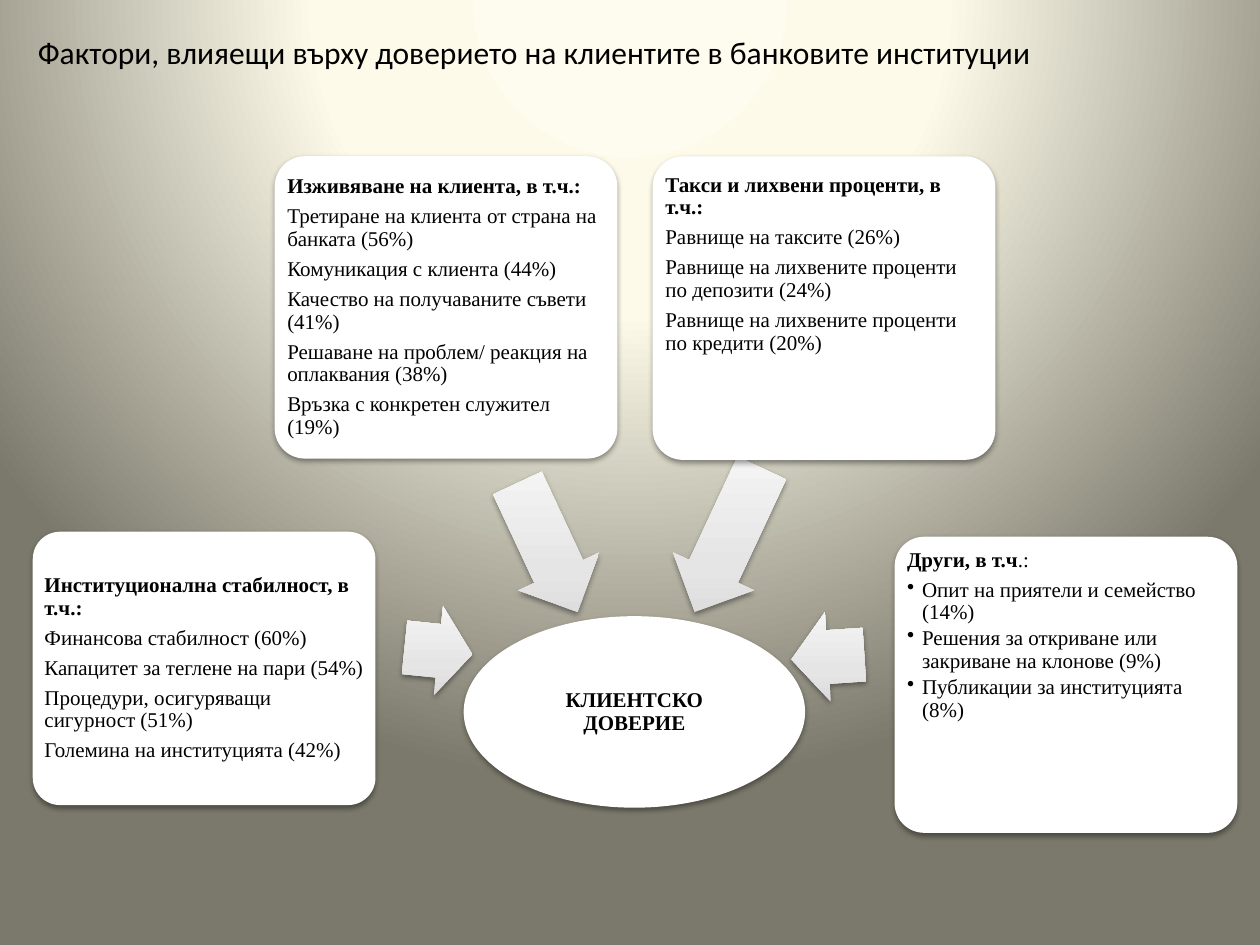
from lxml import etree
from pptx import Presentation
from pptx.dml.color import RGBColor
from pptx.enum.shapes import MSO_SHAPE as SHAPE
from pptx.enum.text import MSO_ANCHOR as ANCHOR, MSO_AUTO_SIZE as AUTO, PP_ALIGN as ALIGN
from pptx.oxml import parse_xml
from pptx.oxml.ns import nsdecls, qn
from pptx.util import Inches, Pt

BLACK = RGBColor(0, 0, 0)
WHITE = RGBColor(255, 255, 255)
BACKDROP = [(0, RGBColor(0xFE, 0xFC, 0xEE)), (40, RGBColor(0xFD, 0xFA, 0xEA)),
            (100, RGBColor(0x7B, 0x79, 0x6B))]
SILVER = [(0, RGBColor(0xDA, 0xDA, 0xDA)), (35, RGBColor(0xE5, 0xE5, 0xE5)),
          (100, RGBColor(0xF5, 0xF5, 0xF5))]
SERIF = "Times New Roman"

# Content
TITLE = "Фактори, влияещи върху доверието на клиентите в банковите институции"
CENTRE = "КЛИЕНТСКО ДОВЕРИЕ"
CARD_W = 2.72
# left, top, height, anchor, top inset, bulleted, heading (bold, regular), items
CARDS = [
    (0.26, 4.22, 2.17, ANCHOR.MIDDLE, 0.03, False,
     ("Институционална стабилност, в т.ч.:", ""),
     ["Финансова стабилност (60%)",
      "Капацитет за теглене на пари (54%)",
      "Процедури, осигуряващи сигурност (51%)",
      "Големина на институцията (42%)"]),
    (2.18, 1.24, 2.4, ANCHOR.MIDDLE, 0.03, False,
     ("Изживяване на клиента, в т.ч.:", ""),
     ["Третиране на клиента от страна на банката (56%)",
      "Комуникация с клиента (44%)",
      "Качество на получаваните съвети (41%)",
      "Решаване на проблем/ реакция на оплаквания (38%)",
      "Връзка с конкретен служител (19%)"]),
    (5.18, 1.24, 2.41, ANCHOR.TOP, 0.07, False,
     ("Такси и лихвени проценти, в т.ч.:", ""),
     ["Равнище на таксите (26%)",
      "Равнище на лихвените проценти по депозити (24%)",
      "Равнище на лихвените проценти по кредити (20%)"]),
    (7.1, 4.26, 2.35, ANCHOR.TOP, 0.03, True,
     ("Други, в т.ч", ".:"),
     ["Опит на приятели и семейство (14%)",
      "Решения за откриване или закриване на клонове (9%)",
      "Публикации за институцията (8%)"]),
]
ARROW_H = 0.71
# left, top, width, rotation
ARROWS = [(3.21, 4.81, 0.54, 185.9), (3.78, 3.99, 1.13, 245),
          (5.15, 3.93, 1.26, 295), (6.28, 4.86, 0.58, 356.2)]


def gradient(stops, direction):
    gs = "".join(f'<a:gs pos="{pos * 1000}"><a:srgbClr val="{color}"/></a:gs>'
                 for pos, color in stops)
    return (f'<a:gradFill {nsdecls("a")} rotWithShape="0">'
            f'<a:gsLst>{gs}</a:gsLst>{direction}</a:gradFill>')


def add_shape(slide, kind, left, top, width, height):
    """White, borderless shape with a soft shadow below it."""
    s = slide.shapes.add_shape(kind, *map(Inches, (left, top, width, height)))
    s.fill.solid()
    s.fill.fore_color.rgb = WHITE
    s.line.fill.background()
    s._element.spPr.append(parse_xml(
        f'<a:effectLst {nsdecls("a")}><a:outerShdw blurRad="40000" dist="20000" '
        'dir="5400000" rotWithShape="0"><a:srgbClr val="000000">'
        '<a:alpha val="38000"/></a:srgbClr></a:outerShdw></a:effectLst>'))
    return s


def set_frame(tf, anchor, inset, top_inset):
    tf.word_wrap = True
    tf.vertical_anchor = anchor
    tf.margin_left = tf.margin_right = tf.margin_bottom = Inches(inset)
    tf.margin_top = Inches(top_inset)


def add_text(p, runs, align=ALIGN.LEFT, after=4.2, bullet=False):
    if bullet:
        pPr = p._p.get_or_add_pPr()
        pPr.set("marL", str(Inches(0.12)))
        pPr.set("indent", str(-Inches(0.12)))
        etree.SubElement(pPr, qn("a:buChar")).set("char", "•")
    p.alignment = align
    p.line_spacing = 0.9
    p.space_after = Pt(after)
    for text, bold in runs:
        if text:
            r = p.add_run()
            r.text = text
            r.font.name, r.font.size, r.font.bold = SERIF, Pt(12), bold
            r.font.color.rgb = BLACK


def add_card(slide, left, top, height, anchor, top_inset, bulleted, heading, items):
    s = add_shape(slide, SHAPE.ROUNDED_RECTANGLE, left, top, CARD_W, height)
    s.adjustments[0] = 0.1
    tf = s.text_frame
    set_frame(tf, anchor, 0.03, top_inset)
    add_text(tf.paragraphs[0], zip(heading, (True, False)))
    for item in items:
        add_text(tf.add_paragraph(), [(item, False)],
                 after=1.8 if bulleted else 4.2, bullet=bulleted)


def add_arrow(slide, left, top, width, rotation):
    s = add_shape(slide, SHAPE.LEFT_ARROW, left, top, width, ARROW_H)
    s.adjustments[0], s.adjustments[1] = 0.6, 0.5
    s.rotation = rotation
    spPr = s._element.spPr
    spPr.replace(spPr.find(qn("a:solidFill")),
                 parse_xml(gradient(SILVER, '<a:lin ang="16200000" scaled="0"/>')))


def main():
    prs = Presentation()
    prs.slide_width, prs.slide_height = Inches(10), Inches(7.5)
    slide = prs.slides.add_slide(prs.slide_layouts[5])

    # Background: circular glow centred above the slide
    glow = gradient(BACKDROP, '<a:path path="circle"><a:fillToRect l="50000" '
                              't="-80000" r="50000" b="180000"/></a:path>')
    slide._element.cSld.insert(0, parse_xml(
        f'<p:bg {nsdecls("p", "a")}><p:bgPr>{glow}<a:effectLst/></p:bgPr></p:bg>'))

    # Title
    title = slide.shapes.title
    title.left, title.top, title.width, title.height = map(
        Inches, (0.2, 0.21, 9.45, 0.4))
    tf = title.text_frame
    set_frame(tf, ANCHOR.TOP, 0.1, 0.05)
    tf.auto_size = AUTO.NONE
    p = tf.paragraphs[0]
    p.alignment = ALIGN.LEFT
    r = p.add_run()
    r.text = TITLE
    r.font.name, r.font.size = "Calibri", Pt(18)
    r.font.color.rgb = BLACK

    # Central ellipse
    centre = add_shape(slide, SHAPE.OVAL, 3.68, 4.89, 2.71, 1.52)
    set_frame(centre.text_frame, ANCHOR.MIDDLE, 0.01, 0.01)
    add_text(centre.text_frame.paragraphs[0], [(CENTRE, True)], ALIGN.CENTER)

    # Each arrow sits behind its card
    for arrow, card in zip(ARROWS, CARDS):
        add_arrow(slide, *arrow)
        add_card(slide, *card)

    prs.save("out.pptx")


if __name__ == "__main__":
    main()
